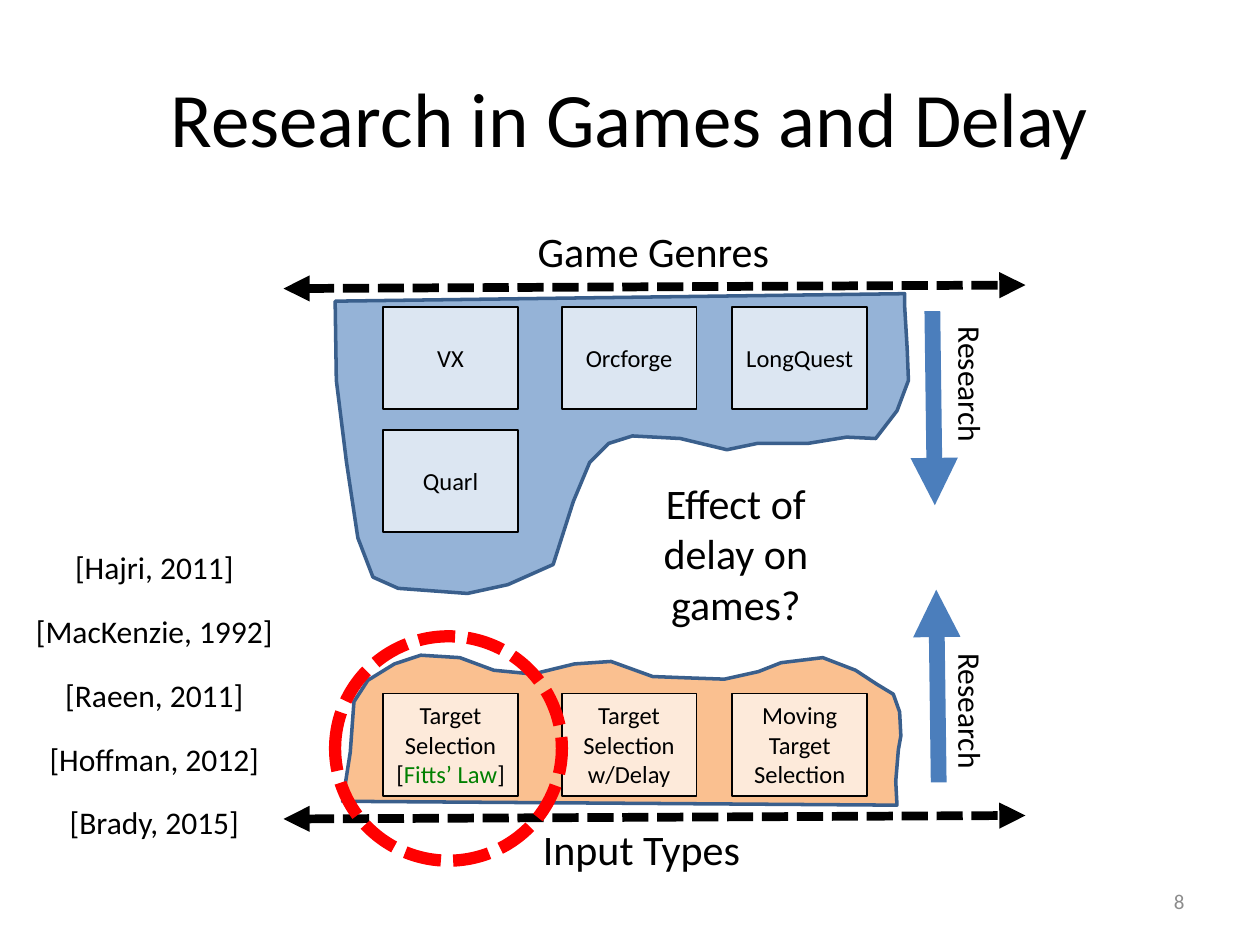
from dataclasses import dataclass

from lxml import etree
from pptx import Presentation
from pptx import util as u
from pptx.dml.color import RGBColor
from pptx.enum import dml, shapes, text
from pptx.oxml.ns import qn

Pt = u.Pt
CENTER, LEFT, RIGHT = text.PP_ALIGN.CENTER, text.PP_ALIGN.LEFT, text.PP_ALIGN.RIGHT


@dataclass(frozen=True)
class Theme:
    font: str = "Calibri"
    ink: str = "000000"
    muted: str = "8C8C8C"
    law: str = "008000"
    game_area: str = "95B3D7"
    game_box: str = "DCE6F2"
    input_area: str = "FAC090"
    input_box: str = "FDEADA"
    outline: str = "3A5F8C"
    arrow: str = "4B7EBC"
    ring: str = "FF0000"
    title: int = 44
    heading: int = 24
    body: int = 18
    box: int = 14
    number: int = 12


T = Theme()


@dataclass(frozen=True)
class Box:
    """A labelled box: each paragraph is a list of (text, colour) runs."""
    left: float
    top: float
    fill: str
    paragraphs: list


@dataclass(frozen=True)
class Label:
    words: str
    left: float
    top: float
    width: float
    height: float
    size: int
    align: text.PP_ALIGN = LEFT
    color: str = T.ink
    rotation: int = 0
    wrap: bool = False
    anchor: text.MSO_ANCHOR = text.MSO_ANCHOR.TOP


@dataclass(frozen=True)
class Arrow:
    start: tuple
    end: tuple
    color: str
    weight: float
    axis: bool = False  # dashed, with a head at both ends


@dataclass(frozen=True)
class Area:
    fill: str
    points: list


def rgb(color: str) -> RGBColor:
    return RGBColor.from_string(color)


def add_run(p, words: str, size: int, color: str) -> None:
    r = p.add_run()
    r.text = words
    r.font.name, r.font.size = T.font, Pt(size)
    r.font.color.rgb = rgb(color)


def style_line(line, color: str, weight: float) -> None:
    line.color.rgb = rgb(color)
    line.width = Pt(weight)


def draw_area(s, area: Area) -> None:
    points = [(Pt(x), Pt(y)) for x, y in area.points]
    builder = s.shapes.build_freeform(*points[0])
    builder.add_line_segments(points[1:], close=True)
    sp = builder.convert_to_shape()
    sp.shadow.inherit = False
    sp.fill.solid()
    sp.fill.fore_color.rgb = rgb(area.fill)
    style_line(sp.line, T.outline, 2)


def draw_box(s, box: Box) -> None:
    sp = s.shapes.add_shape(shapes.MSO_SHAPE.RECTANGLE, Pt(box.left), Pt(box.top), Pt(77), Pt(58.4))
    sp.shadow.inherit = False
    sp.fill.solid()
    sp.fill.fore_color.rgb = rgb(box.fill)
    style_line(sp.line, T.ink, 1)
    tf = sp.text_frame
    tf.word_wrap = True
    tf.vertical_anchor = text.MSO_ANCHOR.MIDDLE
    for i, runs in enumerate(box.paragraphs):
        p = tf.add_paragraph() if i else tf.paragraphs[0]
        p.alignment = CENTER
        for words, color in runs:
            add_run(p, words, T.box, color)


def draw_label(s, label: Label) -> None:
    sp = s.shapes.add_textbox(Pt(label.left), Pt(label.top), Pt(label.width), Pt(label.height))
    sp.rotation = label.rotation
    tf = sp.text_frame
    tf.word_wrap = label.wrap
    tf.vertical_anchor = label.anchor
    p = tf.paragraphs[0]
    p.alignment = label.align
    add_run(p, label.words, label.size, label.color)


def draw_arrow(s, arrow: Arrow) -> None:
    ends = [Pt(v) for v in (*arrow.start, *arrow.end)]
    cx = s.shapes.add_connector(shapes.MSO_CONNECTOR.STRAIGHT, *ends)
    style_line(cx.line, arrow.color, arrow.weight)
    if arrow.axis:
        cx.line.dash_style = dml.MSO_LINE.SQUARE_DOT
    sp_pr = cx._element.spPr
    for tag in ("a:headEnd", "a:tailEnd") if arrow.axis else ("a:tailEnd",):
        etree.SubElement(sp_pr.find(qn("a:ln")), qn(tag), type="triangle")
    etree.SubElement(sp_pr, qn("a:effectLst"))


# Areas behind the boxes
INPUT_AREA = Area(T.input_area, [
    (195.8, 457.9), (200.2, 429.8), (202.3, 401), (210.2, 388.8), (225.4, 379.4),
    (240.5, 374.4), (262.8, 375.8), (282.2, 383), (304.6, 385.2), (328.3, 379.4),
    (349.2, 378), (373, 386.6), (393.8, 387.4), (414, 388.1), (433.4, 383.8),
    (446.4, 378.7), (470.2, 375.8), (488.9, 383), (501.1, 391), (510.5, 396.7),
    (514.1, 406.8), (514.8, 420.5), (513.4, 428.4), (511.9, 446.4), (512.6, 460.1)])
GAME_AREA = Area(T.game_area, [
    (191.5, 172.1), (192.2, 217.4), (198, 264.2), (204.5, 307.4), (213.1, 329.8),
    (227.5, 336.2), (267.1, 339.1), (290.2, 334.1), (316.1, 322.6), (327.6, 286.6),
    (337, 264.2), (347.8, 253.4), (361.4, 249.1), (388.8, 250.6), (415.4, 257),
    (432.7, 253.4), (461.5, 253.4), (483.8, 249.8), (500.4, 250.6), (512.6, 234.7),
    (519.1, 217.4), (518.4, 199.4), (517, 175.7), (517, 167.8)])

# Boxes share three columns
COLUMNS = (219, 321, 418.5)
GAMES = [(0, 175.5, "VX"), (0, 245.7, "Quarl"), (1, 175.5, "Orcforge"), (2, 175.5, "LongQuest")]
INPUTS = [
    [[("Target Selection", T.ink)], [("[", T.ink), ("Fitts’ Law", T.law), ("]", T.ink)]],
    [[("Target Selection w/Delay", T.ink)]],
    [[("Moving Target Selection", T.ink)]],
]
BOXES = [Box(COLUMNS[c], top, T.game_box, [[(name, T.ink)]]) for c, top, name in GAMES]
BOXES += [Box(left, 396.3, T.input_box, paragraphs) for left, paragraphs in zip(COLUMNS, INPUTS)]

# Axes and research directions
ARROWS = [Arrow((162, y), (586, y - 2), T.ink, 5, axis=True) for y in (164.9, 468)]
ARROWS += [Arrow((532.8, 177.8), (534.2, 288.7), T.arrow, 9),
           Arrow((536.4, 447.1), (535, 337), T.arrow, 9)]

# Free-standing text
LABELS = [
    Label("Game Genres", 300.2, 125.3, 148.3, 36, T.heading),
    Label("Input Types", 303.1, 467.3, 128.2, 36, T.heading),
    Label("Effect of delay on games?", 363.6, 269.3, 113.8, 94.3, T.heading, CENTER, wrap=True),
    Label("8", 516.2, 500.4, 167.8, 28.8, T.number, RIGHT, T.muted, wrap=True,
          anchor=text.MSO_ANCHOR.MIDDLE),
]
LABELS += [Label("Research", 514.1, top, 81.4, 28.8, T.body, rotation=90) for top in (205.9, 392.4)]

# Citations: a centred column with an equal pitch
CITATIONS = [("[Hajri, 2011]", 106), ("[MacKenzie, 1992]", 151), ("[Raeen, 2011]", 117),
             ("[Hoffman, 2012]", 136), ("[Brady, 2015]", 112)]
LABELS += [Label(words, 88.2 - width / 2, 309.6 + 36.5 * i, width, 28.8, T.body, CENTER)
           for i, (words, width) in enumerate(CITATIONS)]


def main() -> None:
    prs = Presentation()
    prs.slide_width, prs.slide_height = Pt(720), Pt(540)
    s = prs.slides.add_slide(prs.slide_layouts[5])

    # Title
    title = s.shapes.title
    title.left, title.top, title.width, title.height = Pt(36), Pt(21.6), Pt(648), Pt(90)
    title.text_frame.vertical_anchor = text.MSO_ANCHOR.MIDDLE
    p = title.text_frame.paragraphs[0]
    p.alignment = CENTER
    add_run(p, "Research in Games and Delay", T.title, T.ink)

    # Diagram, from back to front
    for draw, items in ((draw_area, (INPUT_AREA, GAME_AREA)), (draw_box, BOXES),
                        (draw_arrow, ARROWS), (draw_label, LABELS)):
        for item in items:
            draw(s, item)

    # Highlight ring
    ring = s.shapes.add_shape(shapes.MSO_SHAPE.OVAL, Pt(191.5), Pt(363.6), Pt(129.6), Pt(128.2))
    ring.shadow.inherit = False
    ring.fill.background()
    style_line(ring.line, T.ring, 7)
    ring.line.dash_style = dml.MSO_LINE.SQUARE_DOT

    prs.save("out.pptx")


if __name__ == "__main__":
    main()
